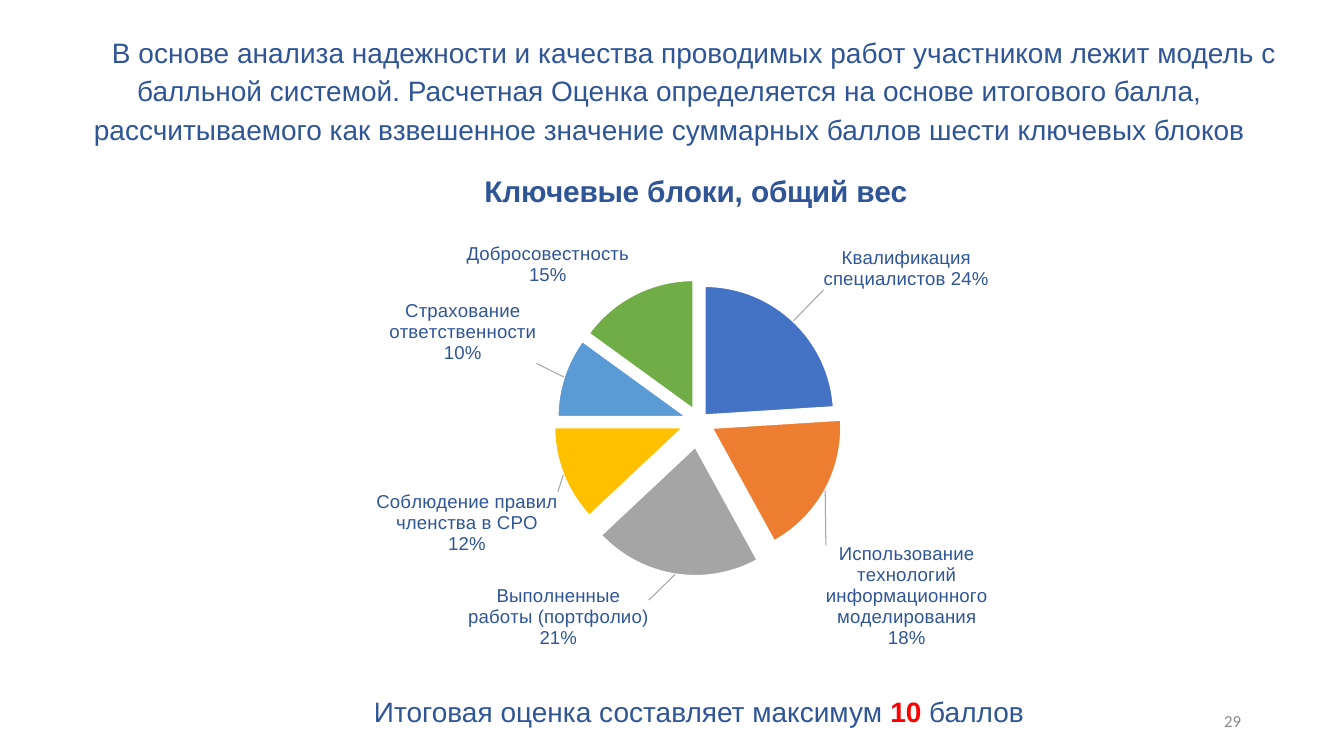
import copy

import pptx
import pptx.chart.data
import pptx.dml.color
import pptx.enum.chart
import pptx.enum.text
import pptx.oxml
import pptx.oxml.ns
import pptx.util

PX = 9144  # 100 px to the inch
BLUE, RED, GREY = "2F5597", "FF0000", "8C8C8C"
CHART_BOX = (240, 149, 901, 495)
LABEL_WIDTH = 0.19

# block, weight, colour, explosion in %, label offset (x, y), label height
BLOCKS = [
    ("Квалификация специалистов", 0.24, "4472C4", 6, (0.029, -0.054), 0.1),
    ("Использование технологий информационного моделирования", 0.18, "ED7D31", 11,
     (-0.005, 0.105), 0.22),
    ("Выполненные работы (портфолио)", 0.21, "A5A5A5", 20, (-0.028, 0.04), 0.14),
    ("Соблюдение правил членства в СРО", 0.12, "FFC000", 13, (0, 0.03), 0.14),
    ("Страхование ответственности", 0.1, "5B9BD5", 10, (-0.024, -0.024), 0.14),
    ("Добросовестность", 0.15, "70AD47", 10, (-0.003, -0.006), 0.1),
]


def rgb(colour):
    return pptx.dml.color.RGBColor.from_string(colour)


def px(*lengths):
    return [pptx.util.Emu(length * PX) for length in lengths]


def style(font, size, colour=BLUE, bold=False, name="Arial"):
    font.name, font.size, font.bold = name, pptx.util.Pt(size), bold
    font.color.rgb = rgb(colour)


def write(frame, parts, size=20, name="Arial", align="LEFT", anchor="TOP",
          spacing=1.0, indent=0):
    """Fill a frame with one paragraph of (text, colour, bold) parts."""
    frame.word_wrap = True
    frame.auto_size = pptx.enum.text.MSO_AUTO_SIZE.NONE
    frame.vertical_anchor = getattr(pptx.enum.text.MSO_ANCHOR, anchor)
    paragraph = frame.paragraphs[0]
    paragraph.alignment = getattr(pptx.enum.text.PP_ALIGN, align)
    paragraph.line_spacing = spacing
    if indent:
        paragraph._p.get_or_add_pPr().set("indent", str(indent * PX))
    for text, colour, bold in parts:
        run = paragraph.add_run()
        run.text = text
        style(run.font, size, colour, bold, name)


def chart_xml(body):
    """Parse one chart element, given without its namespace declaration."""
    tag, rest = body.split(">", 1)
    closing = "/" if tag.endswith("/") else ""
    return pptx.oxml.parse_xml(
        f"{tag.rstrip('/')} {pptx.oxml.ns.nsdecls('c', 'a')}{closing}>{rest}")


def manual_layout(x, y, size=None, edge=True):
    modes = '<c:xMode val="edge"/><c:yMode val="edge"/>' if edge else ""
    target = '<c:layoutTarget val="inner"/>' if size else ""
    extent = f'<c:w val="{size[0]}"/><c:h val="{size[1]}"/>' if size else ""
    return chart_xml(f'<c:layout><c:manualLayout>{target}{modes}<c:x val="{x}"/>'
                     f'<c:y val="{y}"/>{extent}</c:manualLayout></c:layout>')


def label_text(text):
    return chart_xml(
        '<c:tx><c:rich><a:bodyPr wrap="square"/><a:p><a:pPr algn="ctr"/><a:r>'
        f'<a:rPr lang="ru-RU" sz="1330" b="0"><a:solidFill><a:srgbClr val="{BLUE}"/>'
        '</a:solidFill><a:latin typeface="Arial"/></a:rPr>'
        f'<a:t>{text}</a:t></a:r></a:p></c:rich></c:tx>')


def label_size(height):
    return chart_xml(
        '<c:extLst><c:ext uri="{CE6537A1-D6FC-4f65-9D91-7224C49458BB}" '
        'xmlns:c15="http://schemas.microsoft.com/office/drawing/2012/chart">'
        f'<c15:layout><c:manualLayout><c:w val="{LABEL_WIDTH}"/><c:h val="{height}"/>'
        '</c:manualLayout></c15:layout></c:ext></c:extLst>')


def add_labels(series):
    labels = series.data_labels
    labels.show_value = labels.show_category_name = True
    labels.number_format, labels.number_format_is_linked = "0%", False
    labels.position = pptx.enum.chart.XL_LABEL_POSITION.OUTSIDE_END
    style(labels.font, 13.3)

    # Separator and leader lines
    holder = labels._element
    for old in holder.findall(pptx.oxml.ns.qn("c:showLeaderLines")):
        holder.remove(old)
    holder.append(chart_xml("<c:separator> </c:separator>"))
    shared = list(holder)
    holder.append(chart_xml('<c:showLeaderLines val="1"/>'))
    holder.append(chart_xml(
        '<c:leaderLines><c:spPr><a:ln w="9525"><a:solidFill><a:srgbClr val="A6A6A6"/>'
        '</a:solidFill></a:ln></c:spPr></c:leaderLines>'))

    # One placed label per block
    for index, (block, weight, _, _, offset, height) in enumerate(BLOCKS):
        label = chart_xml(f'<c:dLbl><c:idx val="{index}"/></c:dLbl>')
        label.append(manual_layout(*offset, edge=False))
        label.append(label_text(f"{block} {weight:.0%}"))
        label.extend(copy.deepcopy(shared))
        label.append(label_size(height))
        holder.insert(index, label)


def add_weights_pie(slide):
    data = pptx.chart.data.CategoryChartData(number_format="0%")
    data.categories = [block[0] for block in BLOCKS]
    data.add_series("Вес", [block[1] for block in BLOCKS])
    chart = slide.shapes.add_chart(
        pptx.enum.chart.XL_CHART_TYPE.PIE, *px(*CHART_BOX), data).chart
    style(chart.font, 10, "000000", name="Calibri")
    chart.has_legend = False

    # Chart title
    chart.has_title = True
    heading = chart.chart_title
    write(heading.text_frame, [("Ключевые блоки, общий вес", BLUE, True)],
          size=21.3, align="CENTER")
    heading.include_in_layout = False
    for old in heading._element.findall(pptx.oxml.ns.qn("c:layout")):
        heading._element.remove(old)
    heading._element.find(pptx.oxml.ns.qn("c:tx")).addnext(manual_layout(0.261, 0.034))

    # Plot area
    area = chart._chartSpace.chart.plotArea
    for old in area.findall(pptx.oxml.ns.qn("c:layout")):
        area.remove(old)
    area.insert(0, manual_layout(0.361, 0.28, (0.285, 0.526)))

    # Slices
    plot = chart.plots[0]
    plot.vary_by_categories = True
    series = plot.series[0]
    for index, (_, _, colour, explosion, *_) in enumerate(BLOCKS):
        slice_format = series.points[index].format
        slice_format.fill.solid()
        slice_format.fill.fore_color.rgb = rgb(colour)
        slice_format.line.color.rgb = rgb("FFFFFF")
        slice_format.line.width = pptx.util.Pt(1.5)
        slice_format._element.find(pptx.oxml.ns.qn("c:spPr")).addprevious(
            chart_xml(f'<c:explosion val="{explosion}"/>'))
    add_labels(series)


def add_text(slide, box, parts, **text_format):
    write(slide.shapes.add_textbox(*px(*box)).text_frame, parts, **text_format)


def main():
    deck = pptx.Presentation()
    deck.slide_width, deck.slide_height = px(1333, 750)
    slide = deck.slides.add_slide(deck.slide_layouts[5])

    # Introduction
    intro = slide.shapes.title
    intro.left, intro.top, intro.width, intro.height = px(19, 25, 1290, 123)
    write(intro.text_frame, [(
        "В основе анализа надежности и качества проводимых работ участником лежит модель "
        "с балльной системой. Расчетная Оценка определяется на основе итогового балла, "
        "рассчитываемого как взвешенное значение суммарных баллов шести ключевых блоков",
        BLUE, False)], align="CENTER", spacing=1.15, indent=49)

    add_weights_pie(slide)

    # Total score and page number
    add_text(slide, (312, 679, 926, 46),
             [("Итоговая оценка составляет максимум ", BLUE, False),
              ("10", RED, True), (" баллов", BLUE, False)], spacing=1.15, indent=49)
    add_text(slide, (941, 695, 300, 40), [("29", GREY, False)],
             size=12, name="Calibri", align="RIGHT", anchor="MIDDLE")
    deck.save("out.pptx")


if __name__ == "__main__":
    main()
